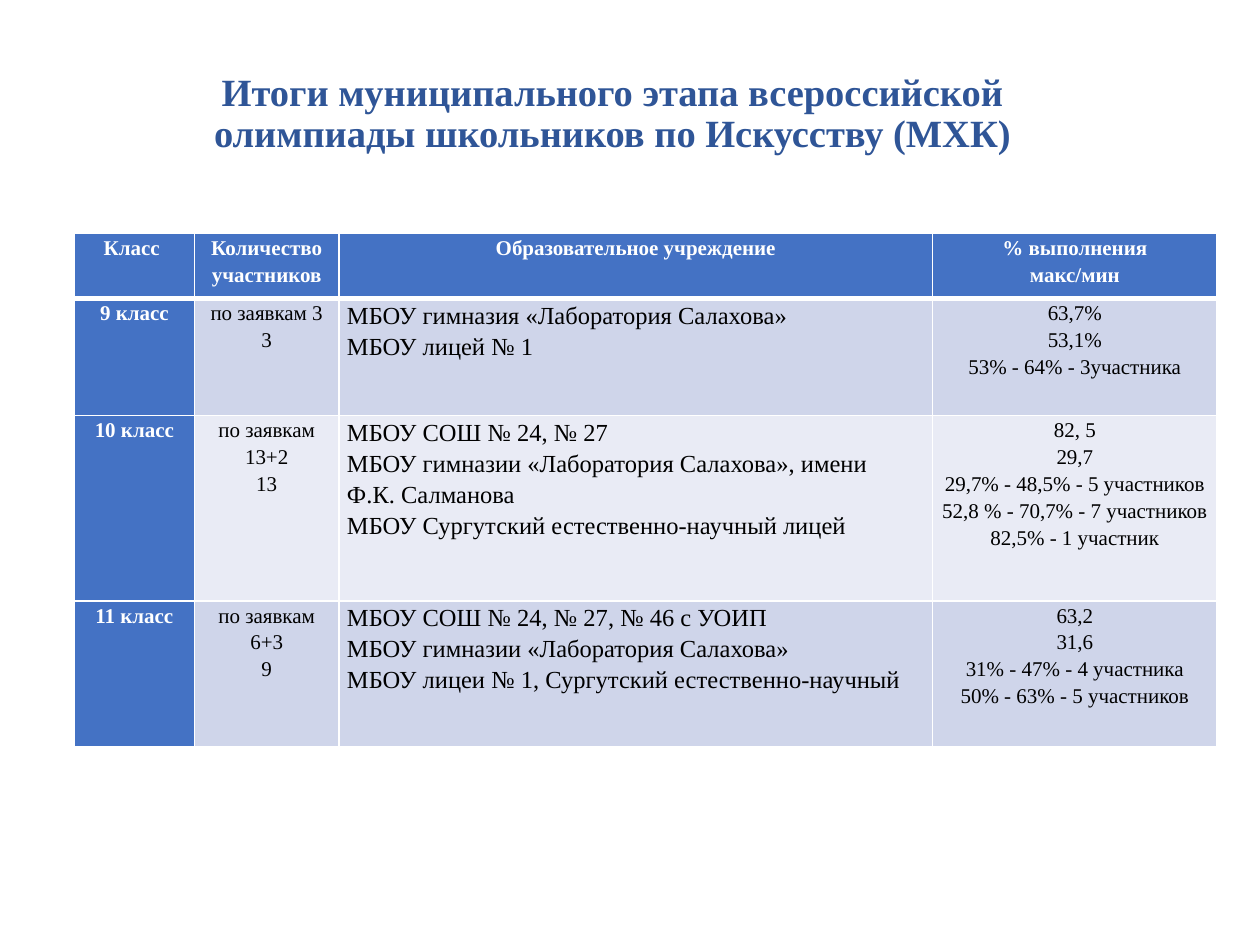
from lxml.etree import SubElement
from pptx import Presentation
from pptx.dml.color import RGBColor
from pptx.enum.text import MSO_ANCHOR, PP_ALIGN
from pptx.oxml.ns import qn
from pptx.util import Pt


def write_text(frame, text, size=12, color="000000", bold=False, align=PP_ALIGN.CENTER, spacing=1.15):
    frame.word_wrap = True
    for index, line in enumerate(text.split("\n")):
        paragraph = frame.add_paragraph() if index else frame.paragraphs[0]
        paragraph.alignment = align
        paragraph.line_spacing = spacing
        run = paragraph.add_run()
        run.text = line
        run.font.name = "Times New Roman"
        run.font.size = Pt(size)
        run.font.bold = bold
        run.font.color.rgb = RGBColor.from_string(color)


def format_cell(cell, fill, bottom_width):
    cell.margin_left = cell.margin_right = Pt(4.5)
    cell.margin_top = cell.margin_bottom = Pt(0)
    properties = cell._tc.get_or_add_tcPr()
    for side, width in (("L", 1), ("R", 1), ("T", 1), ("B", bottom_width)):
        border = SubElement(properties, qn(f"a:ln{side}"), w=str(Pt(width)))
        border_fill = SubElement(border, qn("a:solidFill"))
        SubElement(border_fill, qn("a:srgbClr"), val="FFFFFF")
    cell.fill.solid()
    cell.fill.fore_color.rgb = RGBColor.from_string(fill)


presentation = Presentation()
presentation.slide_width = Pt(720)
presentation.slide_height = Pt(540)
slide = presentation.slides.add_slide(presentation.slide_layouts[6])

title = slide.shapes.add_textbox(Pt(98.6), Pt(28.8), Pt(502.6), Pt(73.4))
title.text_frame.vertical_anchor = MSO_ANCHOR.MIDDLE
write_text(
    title.text_frame,
    "Итоги муниципального этапа всероссийской олимпиады школьников по Искусству (МХК)",
    size=22, color="2F5597", bold=True, spacing=0.9,
)

rows = [
    ("Класс ", "Количество участников", "Образовательное учреждение", "% выполнения\nмакс/мин"),
    (
        "9 класс",
        "по заявкам 3\n3",
        "МБОУ гимназия «Лаборатория Салахова»\nМБОУ лицей № 1",
        "63,7%\n53,1%\n53% - 64% - 3участника",
    ),
    (
        "10 класс",
        "по заявкам 13+2\n13",
        "МБОУ СОШ № 24, № 27\nМБОУ гимназии «Лаборатория Салахова», имени\n"
        "Ф.К. Салманова\nМБОУ Сургутский естественно-научный лицей",
        "82, 5\n29,7\n29,7% - 48,5% - 5 участников\n"
        "52,8 % - 70,7% - 7 участников\n82,5% - 1 участник",
    ),
    (
        "11 класс",
        "по заявкам 6+3\n9",
        "МБОУ СОШ № 24, № 27, № 46 с УОИП\nМБОУ гимназии «Лаборатория Салахова»\n"
        "МБОУ лицеи № 1, Сургутский естественно-научный",
        "63,2\n31,6\n31% - 47% - 4 участника\n50% - 63% - 5 участников",
    ),
]
column_widths = [68.4, 82.8, 339.1, 162.7]
row_heights = [37.4, 67, 105.8, 83.5]

table = slide.shapes.add_table(
    len(rows), len(column_widths), Pt(42.6), Pt(133.2), Pt(sum(column_widths)), Pt(sum(row_heights))
).table
table.first_col = True
for column, width in zip(table.columns, column_widths):
    column.width = Pt(width)
for row, height in zip(table.rows, row_heights):
    row.height = Pt(height)

for row_index, texts in enumerate(rows):
    for column_index, text in enumerate(texts):
        cell = table.cell(row_index, column_index)
        is_header = row_index == 0 or column_index == 0
        is_school = column_index == 2 and not is_header
        band = "CFD5EA" if row_index % 2 else "E9EBF5"
        format_cell(cell, "4472C4" if is_header else band, 1 if row_index else 3)
        write_text(
            cell.text_frame, text,
            size=14 if is_school else 12,
            color="FFFFFF" if is_header else "000000",
            bold=is_header,
            align=PP_ALIGN.LEFT if is_school else PP_ALIGN.CENTER,
        )

presentation.save("out.pptx")
